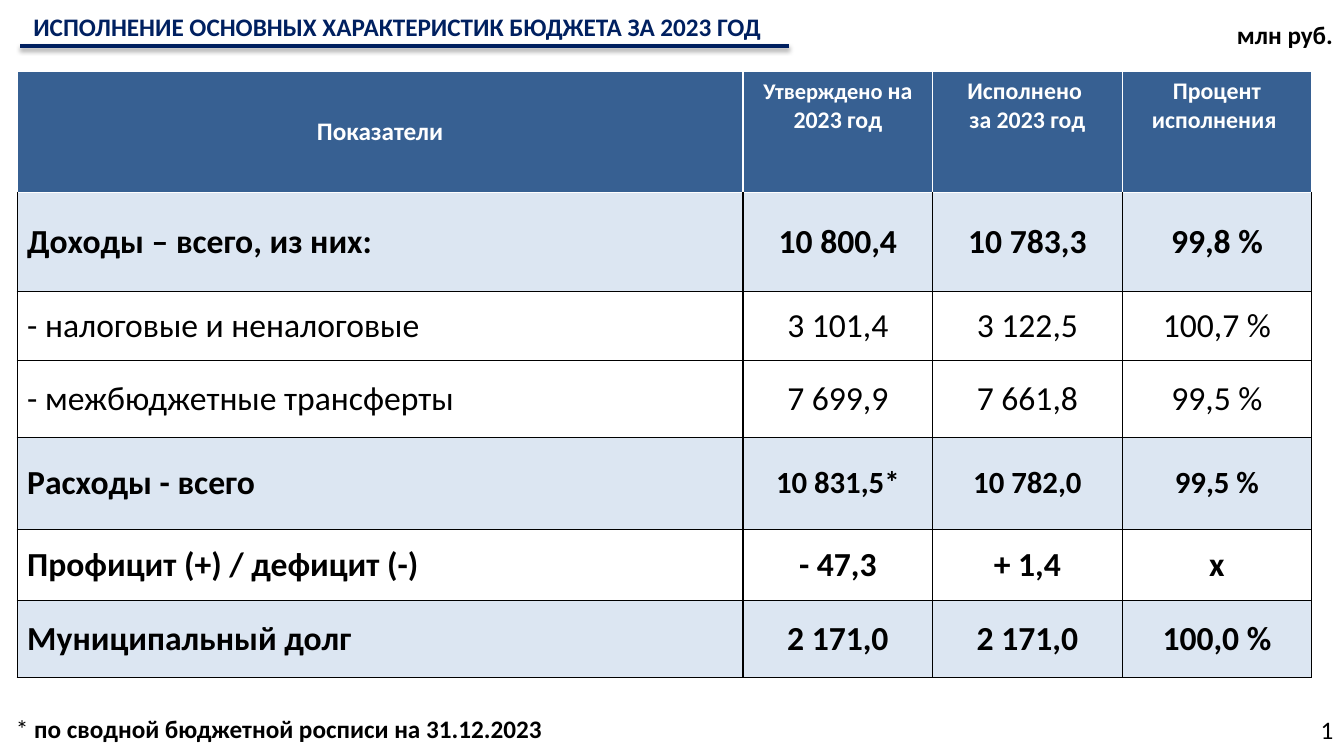
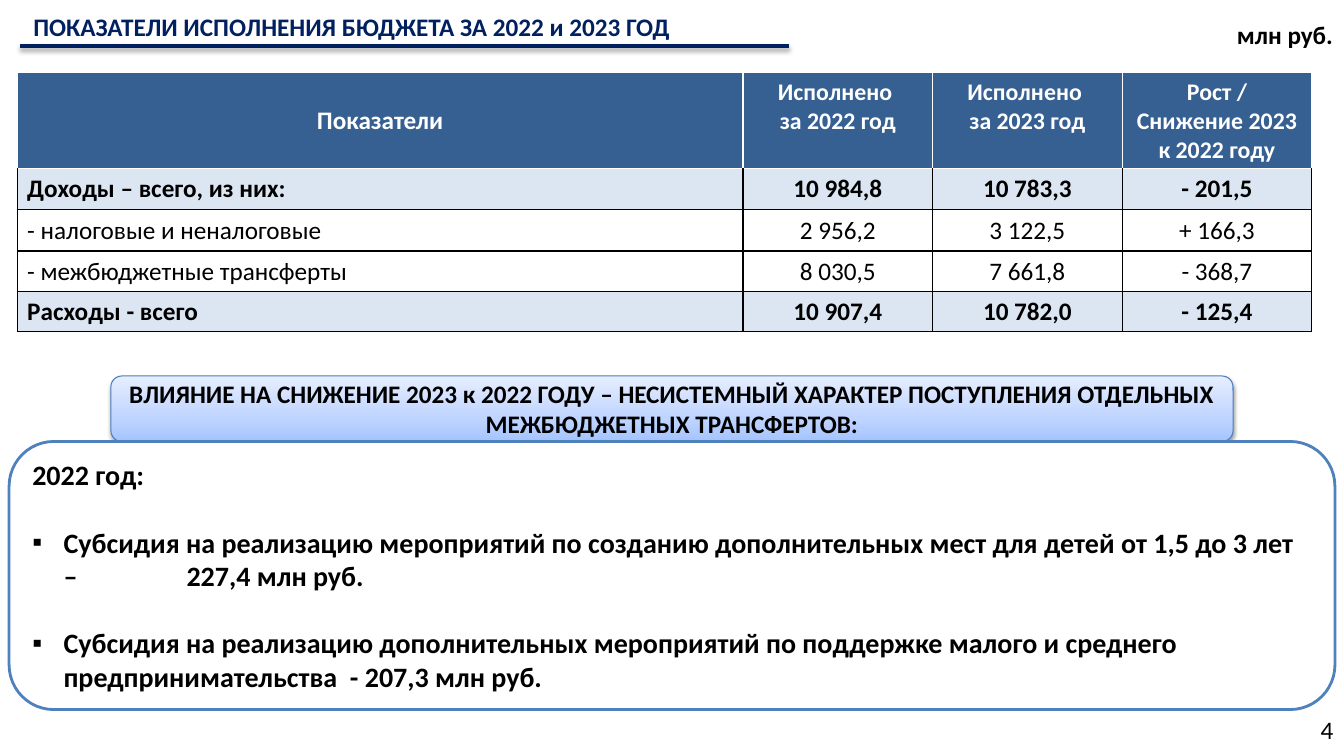
from lxml import etree
from pptx import Presentation
from pptx.dml.color import RGBColor
from pptx.enum.shapes import MSO_CONNECTOR, MSO_SHAPE
from pptx.enum.text import MSO_ANCHOR, MSO_AUTO_SIZE, PP_ALIGN
from pptx.oxml.ns import qn
from pptx.util import Emu, Pt

LEFT, CENTER = PP_ALIGN.LEFT, PP_ALIGN.CENTER
TOP, MIDDLE = MSO_ANCHOR.TOP, MSO_ANCHOR.MIDDLE
NO_FIT = MSO_AUTO_SIZE.NONE
ROUNDED, STRAIGHT = MSO_SHAPE.ROUNDED_RECTANGLE, MSO_CONNECTOR.STRAIGHT
TITLE_ONLY, TITLE_AND_BODY = 5, 1

EMU_PER_PX = 9144
FONT = "Calibri"
COLORS = {
    "navy": "002060", "black": "000000", "white": "FFFFFF",
    "header": "376092", "total": "DCE6F2",
    "banner_line": "4B7EBC", "panel_line": "4F81BD",
}
BANNER_STOPS = ((0, "A4C4FF"), (35, "BFD4FF"), (100, "E6EEFF"))
COLUMN_WIDTHS = (720, 188, 188, 188)
BORDER_SIDES = ("L", "R", "T", "B")

EXECUTION = {
    "title": "ИСПОЛНЕНИЕ ОСНОВНЫХ ХАРАКТЕРИСТИК БЮДЖЕТА ЗА 2023 ГОД",
    "number": "1",
    "table_box": (17, 71),
    "header_height": 120,
    "header": ("Показатели",
               (("Утверждено ", 16), ("на 2023 год", 17)),
               "Исполнено \nза 2023 год",
               "Процент исполнения "),
    "rows": (
        (98, "total", True, 24, 24, ("Доходы – всего, из них:", "10 800,4", "10 783,3", "99,8 %")),
        (69, "white", False, 24, 24, ("- налоговые и неналоговые", "3 101,4", "3 122,5", "100,7 %")),
        (76, "white", False, 24, 24, ("- межбюджетные трансферты", "7 699,9", "7 661,8", "99,5 %")),
        (91, "total", True, 24, 22, ("Расходы - всего", "10 831,5*", "10 782,0", "99,5 %")),
        (71, "white", True, 24, 24, ("Профицит (+) / дефицит (-)", "- 47,3", "+ 1,4", "х")),
        (76, "total", True, 24, 24, ("Муниципальный долг", "2 171,0", "2 171,0", "100,0 %")),
    ),
}
COMPARISON = {
    "title": "ПОКАЗАТЕЛИ ИСПОЛНЕНИЯ БЮДЖЕТА ЗА 2022 и 2023 ГОД",
    "number": "4",
    "table_box": (17, 72),
    "header_height": 86,
    "header": ("Показатели",
               "Исполнено \nза 2022 год",
               "Исполнено \nза 2023 год",
               "Рост / Снижение 2023 к 2022 году"),
    "rows": (
        (41, "total", True, 18, 18, ("Доходы – всего, из них:", "10 984,8", "10 783,3", "- 201,5")),
        (41, "white", False, 18, 18, ("- налоговые и неналоговые", "2 956,2", "3 122,5", "+ 166,3")),
        (39, "white", False, 18, 18, ("- межбюджетные трансферты", "8 030,5", "7 661,8", "- 368,7")),
        (36, "total", True, 18, 18, ("Расходы - всего", "10 907,4", "10 782,0", "- 125,4")),
    ),
}
BANNER_TEXT = ("ВЛИЯНИЕ НА СНИЖЕНИЕ 2023 к 2022 ГОДУ – НЕСИСТЕМНЫЙ ХАРАКТЕР ПОСТУПЛЕНИЯ "
               "ОТДЕЛЬНЫХ МЕЖБЮДЖЕТНЫХ ТРАНСФЕРТОВ:")
PANEL_HEADING = "2022 год:"
PANEL_ITEMS = (
    "Субсидия на реализацию мероприятий по созданию дополнительных мест для детей "
    "от 1,5 до 3 лет –\t227,4 млн руб.",
    "Субсидия на реализацию дополнительных мероприятий по поддержке малого и среднего "
    "предпринимательства  - 207,3 млн руб.",
)


def px(value):
    """Turn a pixel length into EMU."""
    return Emu(value * EMU_PER_PX)


def rgb(name):
    """Look up a named colour."""
    return RGBColor.from_string(COLORS[name])


def apply(target, **values):
    """Set several attributes on one object."""
    for name, value in values.items():
        setattr(target, name, value)


def place(item, box):
    """Move and size an item to a pixel box."""
    apply(item, **dict(zip(("left", "top", "width", "height"), map(px, box))))


def add_span(para, text, size, color="black", bold=False):
    """Append one formatted run to a paragraph."""
    span = para.add_run()
    span.text = text
    apply(span.font, name=FONT, size=Pt(size), bold=bold)
    span.font.color.rgb = rgb(color)


def write(frame, content, size, color="black", bold=False, align=LEFT):
    """Write lines, or a sequence of sized spans, into a text frame."""
    lines = content.split("\n") if isinstance(content, str) else [content]
    for index, line in enumerate(lines):
        para = frame.paragraphs[0] if index == 0 else frame.add_paragraph()
        para.alignment = align
        spans = ((line, size),) if isinstance(line, str) else line
        for text, span_size in spans:
            add_span(para, text, span_size, color, bold)


def add_label(page, box, text, bold=False):
    """Add a one-line text box and return its paragraph."""
    frame = page.shapes.add_textbox(*map(px, box)).text_frame
    frame.word_wrap = False
    write(frame, text, 18, bold=bold)
    return frame.paragraphs[0]


def add_shadow(shape, distance, opacity):
    """Give a shape a soft shadow below it."""
    effects = etree.SubElement(shape._element.spPr, qn("a:effectLst"))
    shadow = etree.SubElement(effects, qn("a:outerShdw"), blurRad=str(Pt(3.1)),
                              dist=str(Pt(distance)), dir="5400000", rotWithShape="0")
    color = etree.SubElement(shadow, qn("a:srgbClr"), val=COLORS["black"])
    etree.SubElement(color, qn("a:alpha"), val=str(opacity * 1000))


def add_frame(page, content):
    """Place the title, its rule, the unit and the page number."""
    title = page.shapes.title
    place(title, (23, 6, 1185, 40))
    apply(title.text_frame, vertical_anchor=TOP, word_wrap=True, auto_size=NO_FIT)
    write(title.text_frame, content["title"], 18, "navy", True)
    rule = page.shapes.add_connector(STRAIGHT, *map(px, (20, 46, 783, 46)))
    rule.line.width = Pt(3)
    rule.line.color.rgb = rgb("navy")
    add_shadow(rule, 1.8, 35)
    add_label(page, (1217, 14, 117, 40), "млн руб.", True)
    add_label(page, (1300, 704, 33, 40), content["number"])


def style_cell(cell, fill, borders):
    """Set the four borders and the fill of a table cell."""
    properties = cell._tc.get_or_add_tcPr()
    for side, color in zip(BORDER_SIDES, borders):
        line = etree.SubElement(properties, qn("a:ln" + side), w=str(Pt(1)))
        paint = etree.SubElement(line, qn("a:solidFill"))
        etree.SubElement(paint, qn("a:srgbClr"), val=COLORS[color])
    cell.fill.solid()
    cell.fill.fore_color.rgb = rgb(fill)


def add_budget_table(page, content):
    """Build the budget table from its header and rows."""
    header = (content["header_height"], "header", True, 18, 17, content["header"])
    rows = (header, *content["rows"])
    box = (*content["table_box"], sum(COLUMN_WIDTHS), sum(row[0] for row in rows))
    table = page.shapes.add_table(len(rows), len(COLUMN_WIDTHS), *map(px, box)).table
    table.horz_banding = False
    for column, width in zip(table.columns, COLUMN_WIDTHS):
        column.width = px(width)
    for r, (height, fill, bold, label_size, value_size, texts) in enumerate(rows):
        table.rows[r].height = px(height)
        is_header = r == 0
        edge = "white" if is_header else "black"
        borders = (edge, edge, "white" if r < 2 else "black", edge)
        for c, text in enumerate(texts):
            cell = table.cell(r, c)
            style_cell(cell, fill, borders)
            cell.vertical_anchor = TOP if is_header and c else MIDDLE
            write(cell.text_frame, text, value_size if c else label_size,
                  "white" if is_header else "black", bold,
                  CENTER if is_header or c else LEFT)


def add_banner(page, box):
    """Add the gradient banner with its statement."""
    banner = page.shapes.add_shape(ROUNDED, *map(px, box))
    banner.fill.gradient()
    banner.fill.gradient_angle = 90
    stops = banner._element.spPr.find(qn("a:gradFill")).find(qn("a:gsLst"))
    for stop in list(stops):
        stops.remove(stop)
    for position, color in BANNER_STOPS:
        stop = etree.SubElement(stops, qn("a:gs"), pos=str(position * 1000))
        etree.SubElement(stop, qn("a:srgbClr"), val=color)
    banner.line.color.rgb = rgb("banner_line")
    banner.line.width = Pt(0.75)
    add_shadow(banner, 1.6, 38)
    apply(banner.text_frame, word_wrap=True, vertical_anchor=MIDDLE)
    write(banner.text_frame, BANNER_TEXT, 18, bold=True, align=CENTER)


def set_bullet(para, bulleted):
    """Set the indent, bullet and tab stop of a list paragraph."""
    properties = para._p.get_or_add_pPr()
    indent = px(31) if bulleted else 0
    properties.set("marL", str(indent))
    properties.set("indent", str(-indent))
    if not bulleted:
        etree.SubElement(properties, qn("a:buNone"))
        return
    etree.SubElement(properties, qn("a:buFont"), typeface="Arial")
    etree.SubElement(properties, qn("a:buChar"), char="▪")
    tabs = etree.SubElement(properties, qn("a:tabLst"))
    etree.SubElement(tabs, qn("a:tab"), pos=str(px(153)), algn="l")


def add_panel(page, box):
    """Add the outlined panel and lay the body list over it."""
    left, top, width, height = box
    panel = page.shapes.add_shape(ROUNDED, *map(px, box))
    panel.shadow.inherit = False
    panel.fill.solid()
    panel.fill.fore_color.rgb = rgb("white")
    panel.line.color.rgb = rgb("panel_line")
    panel.line.width = Pt(2)
    body = page.placeholders[1]
    place(body, (left + 13, top, width - 30, height))
    page.shapes._spTree.append(body._element)
    frame = body.text_frame
    apply(frame, word_wrap=True, vertical_anchor=MIDDLE, auto_size=NO_FIT)
    write(frame, "\n".join((PANEL_HEADING, *PANEL_ITEMS)), 20, bold=True)
    for index, para in enumerate(frame.paragraphs):
        para.space_before = Pt(24 if index else 0)
        set_bullet(para, index > 0)


def add_execution_page(deck):
    """Build the slide on budget execution in 2023."""
    page = deck.slides.add_slide(deck.slide_layouts[TITLE_ONLY])
    add_frame(page, EXECUTION)
    add_budget_table(page, EXECUTION)
    footnote = add_label(page, (6, 703, 546, 40), "* ")
    add_span(footnote, "по сводной бюджетной росписи на 31.12.2023", 18, bold=True)


def add_comparison_page(deck):
    """Build the slide comparing 2022 and 2023."""
    page = deck.slides.add_slide(deck.slide_layouts[TITLE_AND_BODY])
    add_frame(page, COMPARISON)
    add_budget_table(page, COMPARISON)
    add_banner(page, (110, 373, 1113, 65))
    add_panel(page, (9, 438, 1315, 266))


def main():
    """Build and save the deck."""
    deck = Presentation()
    apply(deck, slide_width=px(1333), slide_height=px(750))
    add_execution_page(deck)
    add_comparison_page(deck)
    deck.save("out.pptx")


if __name__ == "__main__":
    main()
